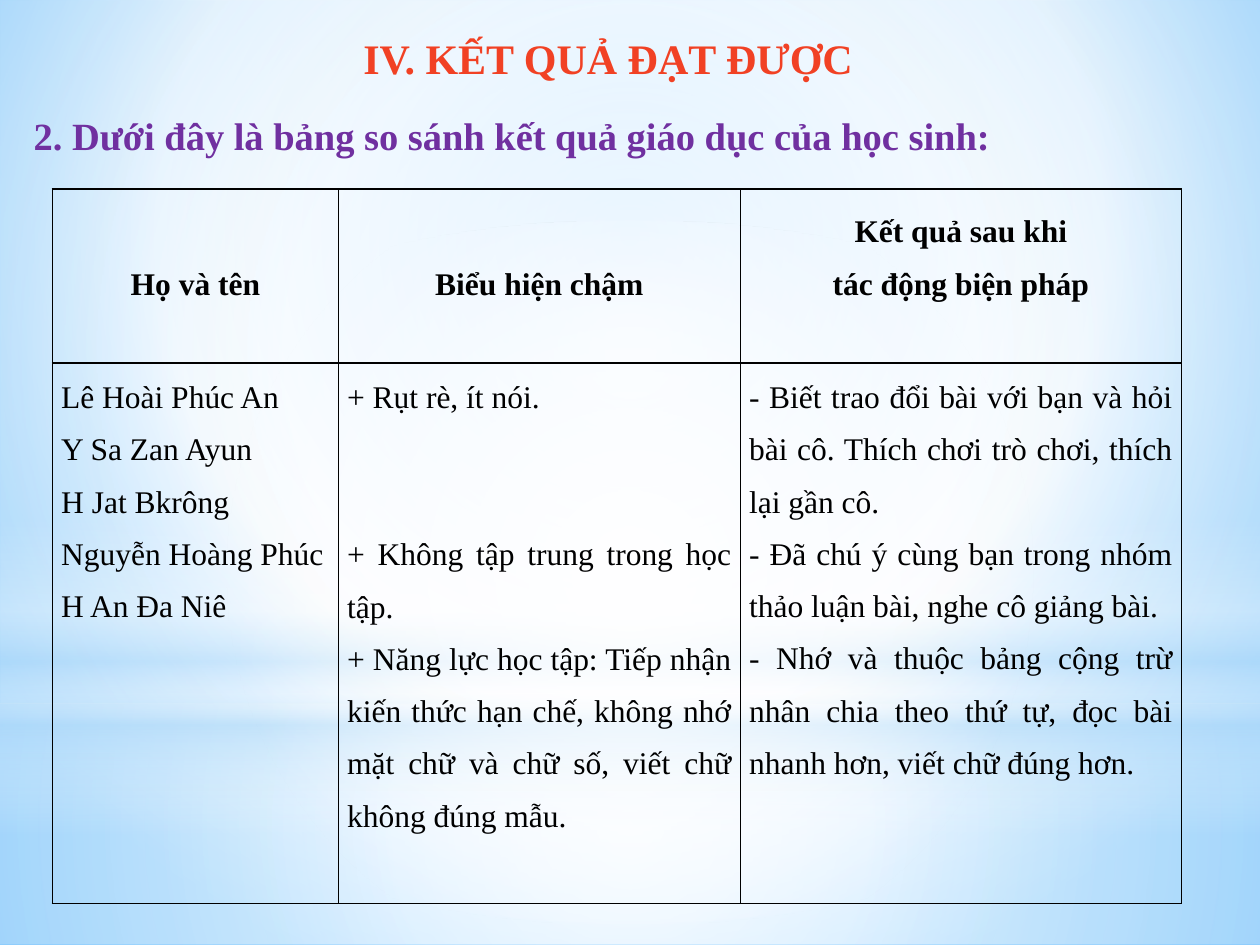
"""Build a slide comparing pupils' results before and after the measures."""
from dataclasses import dataclass
from typing import Any, Sequence

from lxml.etree import SubElement
from pptx import Presentation
from pptx.dml.color import RGBColor
from pptx.enum.shapes import MSO_SHAPE as Shp
from pptx.enum.text import MSO_ANCHOR as Anchor, MSO_AUTO_SIZE as Auto, PP_ALIGN as Align
from pptx.oxml.ns import qn
from pptx.util import Pt

BLACK = RGBColor(0x00, 0x00, 0x00)
WHITE = RGBColor(0xFF, 0xFF, 0xFF)
ICE = RGBColor(0xB4, 0xDC, 0xFA)
SKY = RGBColor(0x9E, 0xD5, 0xFF)
AZURE = RGBColor(0x5B, 0xB9, 0xFF)
RED = RGBColor(0xF1, 0x41, 0x24)
PURPLE = RGBColor(0x70, 0x30, 0xA0)
FONT = "Times New Roman"
NO_STYLE = "{2D5ABB26-0587-4C30-8999-92F81FD0307C}"


@dataclass(frozen=True)
class Stop:
    pos: int
    color: RGBColor
    alpha: int = 100


@dataclass(frozen=True)
class Glow:
    kind: Shp
    top: float
    height: float
    stops: Sequence[Stop]
    focus: Sequence[int] | None = (50, 50, 50, 50)


@dataclass(frozen=True)
class Para:
    text: str
    before: float = 0


@dataclass(frozen=True)
class CellText:
    paras: Sequence[Para]
    bottom: float = 0


BG_STOPS = (Stop(0, SKY), Stop(60, WHITE), Stop(100, AZURE))
GLOWS = (
    Glow(Shp.RECTANGLE, 402, 138, (Stop(0, WHITE, 91), Stop(37, WHITE, 76), Stop(100, ICE, 79))),
    Glow(Shp.RECTANGLE, 0, 402, (Stop(0, WHITE, 89), Stop(48, WHITE, 62), Stop(100, ICE, 79))),
    Glow(Shp.RECTANGLE, 297, 180,
         (Stop(0, WHITE, 0), Stop(29, WHITE, 30), Stop(45, ICE, 40),
          Stop(55, WHITE, 26), Stop(65, ICE, 60), Stop(100, WHITE, 0)), None),
    Glow(Shp.OVAL, 126, 402, (Stop(0, WHITE), Stop(56, WHITE, 0))),
)
COLS = (163.4, 229.7, 252, 15.1)
ROWS = (99.4, 308.9)
HEADS = (
    CellText((Para("Họ và tên"),)),
    CellText((Para("Biểu hiện chậm"),)),
    CellText((Para("Kết quả sau khi"), Para("tác động biện pháp")), 30),
)
BODIES = (
    CellText((Para("Lê Hoài Phúc An"), Para("Y Sa Zan Ayun"), Para("H Jat Bkrông"),
              Para("Nguyễn Hoàng Phúc"), Para("H An Đa Niê"))),
    CellText((
        Para("+ Rụt rè, ít nói."),
        Para("+ Không tập trung trong học tập.", 60),
        Para("+ Năng lực học tập: Tiếp nhận kiến thức hạn chế, không nhớ mặt chữ "
             "và chữ số, viết chữ không đúng mẫu."))),
    CellText((
        Para("- Biết trao đổi bài với bạn và hỏi bài cô. Thích chơi trò chơi, thích lại gần cô."),
        Para("- Đã chú ý cùng bạn trong nhóm thảo luận bài, nghe cô giảng bài."),
        Para("- Nhớ và thuộc bảng cộng trừ nhân chia theo thứ tự, đọc bài nhanh hơn, "
             "viết chữ đúng hơn."))),
)


def set_attrs(obj: Any, values: dict[str, Any]) -> None:
    for name, value in values.items():
        setattr(obj, name, value)


def style_font(font: Any, size: float, color: RGBColor, bold: bool) -> None:
    set_attrs(font, {"name": FONT, "size": Pt(size), "bold": bold})
    font.color.rgb = color


def set_gradient(fill: Any, root: Any, stops: Sequence[Stop], focus: Sequence[int] | None) -> None:
    fill.gradient()
    grad = next(root.iter(qn("a:gradFill")))
    for child in list(grad):
        grad.remove(child)
    lst = SubElement(grad, qn("a:gsLst"))
    for stop in stops:
        gs = SubElement(lst, qn("a:gs"), pos=str(stop.pos * 1000))
        clr = SubElement(gs, qn("a:srgbClr"), val=str(stop.color))
        SubElement(clr, qn("a:alpha"), val=str(stop.alpha * 1000))
    if focus is None:
        SubElement(grad, qn("a:lin"), ang="5400000", scaled="0")
    else:
        way = SubElement(grad, qn("a:path"), path="circle")
        edges = {side: str(v * 1000) for side, v in zip("ltrb", focus)}
        SubElement(way, qn("a:fillToRect"), **edges)


def add_backdrop(prs: Any, s: Any) -> None:
    master = prs.slide_master
    set_gradient(master.background.fill, master.element, BG_STOPS, (20, 10, 20, 60))
    for i, glow in enumerate(GLOWS):
        sp = s.shapes.add_shape(glow.kind, 0, Pt(glow.top), prs.slide_width, Pt(glow.height))
        sp.shadow.inherit = False
        sp.line.fill.background()
        set_gradient(sp.fill, sp.element, glow.stops, glow.focus)
        sp.element.nvSpPr.cNvPr.set("id", str(20 + i))
        master.shapes.element.insert(2 + i, sp.element)


def fill_heading(sp: Any, box: Sequence[float], text: str, size: float,
                 color: RGBColor, align: Align, wrap: bool) -> None:
    set_attrs(sp, dict(zip(("left", "top", "width", "height"), map(Pt, box))))
    tf = sp.text_frame
    set_attrs(tf, {"word_wrap": wrap, "auto_size": Auto.SHAPE_TO_FIT_TEXT,
                   "vertical_anchor": Anchor.TOP})
    p = tf.paragraphs[0]
    pPr = p._p.get_or_add_pPr()
    for name in ("marL", "indent"):
        pPr.set(name, "0")
    SubElement(pPr, qn("a:buNone"))
    set_attrs(p, {"alignment": align, "space_before": Pt(0)})
    r = p.add_run()
    r.text = text
    style_font(r.font, size, color, True)


def set_borders(cell: Any, sides: str) -> None:
    tcPr = cell._tc.get_or_add_tcPr()
    for i, side in enumerate(sides):
        ln = SubElement(tcPr, qn(f"a:ln{side}"), w=str(Pt(1)))
        solid = SubElement(ln, qn("a:solidFill"))
        SubElement(solid, qn("a:srgbClr"), val=str(BLACK))
        tcPr.insert(i, ln)


def fill_cell(cell: Any, content: CellText, header: bool) -> None:
    set_attrs(cell, {"margin_left": Pt(5), "margin_right": Pt(5), "margin_top": 0,
                     "margin_bottom": Pt(content.bottom),
                     "vertical_anchor": Anchor.MIDDLE if header else Anchor.TOP})
    tf = cell.text_frame
    for i, para in enumerate(content.paras):
        p = tf.add_paragraph() if i else tf.paragraphs[0]
        set_attrs(p, {"alignment": Align.CENTER if header else Align.JUSTIFY,
                      "line_spacing": 1.5})
        if para.before:
            p.space_before = Pt(para.before)
        r = p.add_run()
        r.text = para.text
        style_font(r.font, 18, BLACK, header)


def add_results(s: Any) -> None:
    frame = s.shapes.add_table(len(ROWS), len(COLS), Pt(30), Pt(108), Pt(sum(COLS)), Pt(sum(ROWS)))
    tbl = frame.table
    set_attrs(tbl, {"first_row": False, "horz_banding": False})
    next(frame._element.iter(qn("a:tableStyleId"))).text = NO_STYLE
    for col, width in zip(tbl.columns, COLS):
        col.width = Pt(width)
    for row, height in zip(tbl.rows, ROWS):
        row.height = Pt(height)
    last = len(COLS) - 1
    tbl.cell(0, last).merge(tbl.cell(1, last))
    for i, contents in enumerate((HEADS, BODIES)):
        for j in range(len(COLS)):
            cell = tbl.cell(i, j)
            cell.fill.background()
            set_borders(cell, "L" if j == last else "LRTB")
            if j < last:
                fill_cell(cell, contents[j], i == 0)


def main() -> None:
    prs = Presentation()
    set_attrs(prs, {"slide_width": Pt(720), "slide_height": Pt(540)})
    s = prs.slides.add_slide(prs.slide_layouts[1])
    add_backdrop(prs, s)
    fill_heading(s.placeholders[1], (12, 60.5, 564, 34),
                 "2. Dưới đây là bảng so sánh kết quả giáo dục của học sinh:",
                 22, PURPLE, Align.JUSTIFY, True)
    fill_heading(s.shapes.title, (199, 15, 297, 36), "IV. KẾT QUẢ ĐẠT ĐƯỢC",
                 24, RED, Align.CENTER, False)
    add_results(s)
    prs.save("out.pptx")


if __name__ == "__main__":
    main()
